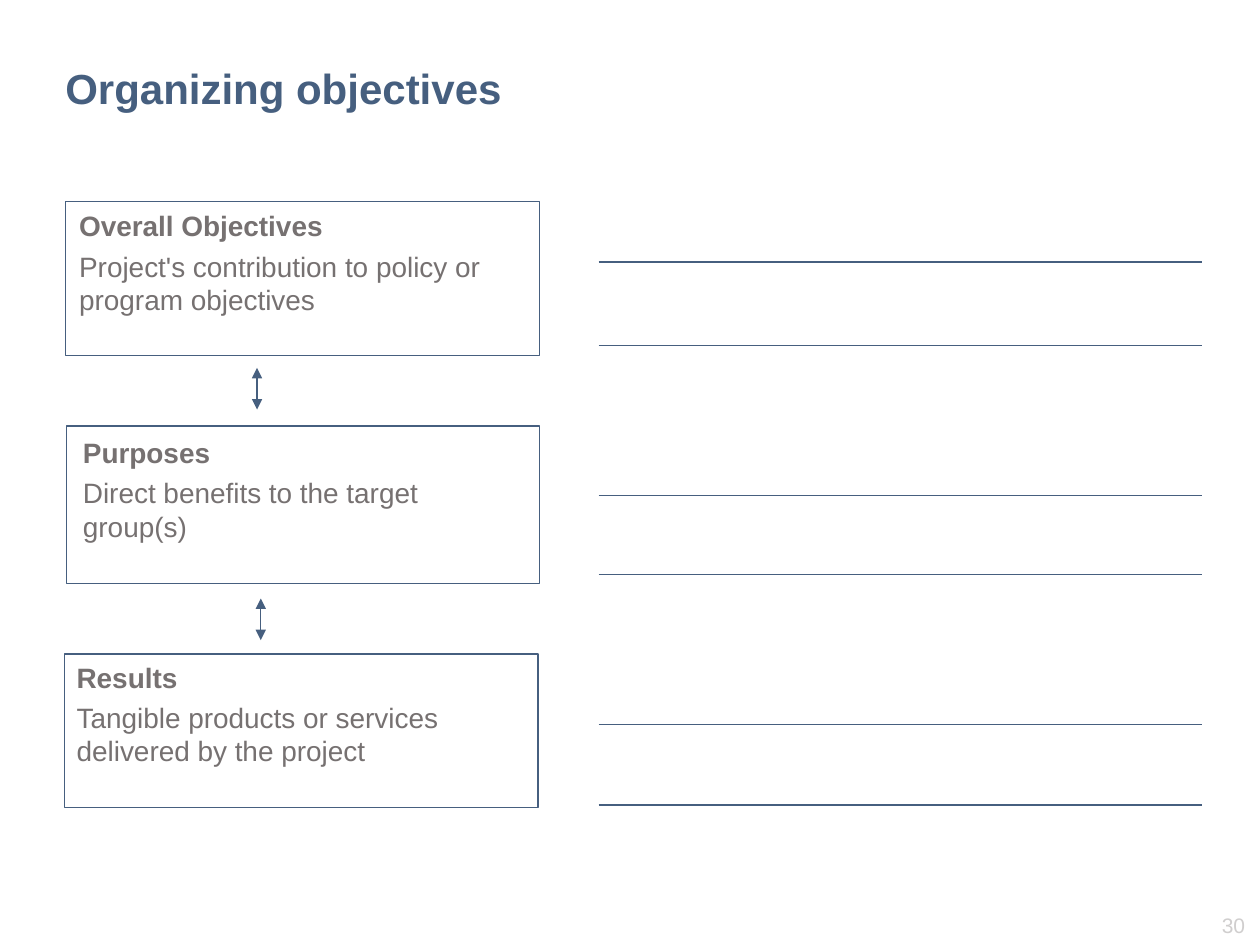
from lxml.etree import SubElement
from pptx import Presentation
from pptx.dml.color import RGBColor
from pptx.enum.shapes import MSO_CONNECTOR, MSO_SHAPE
from pptx.enum.text import MSO_ANCHOR, PP_ALIGN
from pptx.oxml.ns import qn
from pptx.util import Inches, Pt

NAVY = RGBColor(0x46, 0x5F, 0x7F)
GRAY = RGBColor(0x76, 0x71, 0x71)
PALE = RGBColor(0xD0, 0xCE, 0xCE)

TITLE = "Organizing objectives"
PAGE_NUMBER = "30"
# heading, description, frame (left, top, width, height), text (left, top, width)
LEVELS = [
    ("Overall Objectives", "Project's contribution to policy or program objectives",
     (0.52, 1.6, 3.76, 1.22), (0.53, 1.61, 3.67)),
    ("Purposes", "Direct benefits to the target group(s)",
     (0.53, 3.38, 3.75, 1.25), (0.56, 3.41, 3.25)),
    ("Results", "Tangible products or services delivered by the project",
     (0.51, 5.19, 3.76, 1.22), (0.51, 5.19, 3.4)),
]
TEXT_HEIGHT = 0.96
ARROWS = [(2.04, 2.92), (2.07, 4.75)]
ARROW_LENGTH = 0.33
RULE_LEFT, RULE_RIGHT = 4.75, 9.54
RULE_HEIGHTS = [2.08, 2.74, 3.93, 4.56, 5.75, 6.39]


def add_text(page, place, lines, size, color, align=PP_ALIGN.LEFT,
             anchor=MSO_ANCHOR.TOP, before=0):
    """Add a text box with one paragraph for each (text, bold) pair."""
    frame = page.shapes.add_textbox(*map(Inches, place)).text_frame
    frame.word_wrap = True
    frame.vertical_anchor = anchor
    for index, (text, bold) in enumerate(lines):
        para = frame.add_paragraph() if index else frame.paragraphs[0]
        para.alignment = align
        para.space_before = Pt(before)
        span = para.add_run()
        span.text = text
        span.font.color.rgb = color
        for name, value in {"name": "Arial", "size": Pt(size), "bold": bold}.items():
            setattr(span.font, name, value)


def add_frame(page, place):
    box = page.shapes.add_shape(MSO_SHAPE.RECTANGLE, *map(Inches, place))
    box.shadow.inherit = False
    box.fill.background()
    box.line.color.rgb = NAVY
    box.line.width = Pt(0.75)


def add_line(page, start, end, arrowheads=False):
    line = page.shapes.add_connector(MSO_CONNECTOR.STRAIGHT, *map(Inches, start + end))
    line.line.color.rgb = NAVY
    line.line.width = Pt(0.75)
    if arrowheads:
        outline = line.line._get_or_add_ln()
        for tag in ("a:headEnd", "a:tailEnd"):
            SubElement(outline, qn(tag), type="triangle")
    SubElement(line._element.spPr, qn("a:effectLst"))


def main():
    deck = Presentation()
    deck.slide_width, deck.slide_height = Inches(10), Inches(7.5)
    page = deck.slides.add_slide(deck.slide_layouts[6])

    add_text(page, (0.42, 0.32, 7.77, 0.75), [(TITLE, True)], 24, NAVY,
             anchor=MSO_ANCHOR.MIDDLE)
    for heading, description, frame, text in LEVELS:
        add_frame(page, frame)
        add_text(page, text + (TEXT_HEIGHT,), [(heading, True), (description, False)],
                 16, GRAY, before=3.7)
    for x, top in ARROWS:
        add_line(page, (x, top), (x, top + ARROW_LENGTH), arrowheads=True)
    for y in RULE_HEIGHTS:
        add_line(page, (RULE_LEFT, y), (RULE_RIGHT, y))
    add_text(page, (9.16, 7.19, 0.82, 0.3), [(PAGE_NUMBER, False)], 12, PALE,
             align=PP_ALIGN.RIGHT)

    deck.save("out.pptx")


if __name__ == "__main__":
    main()
